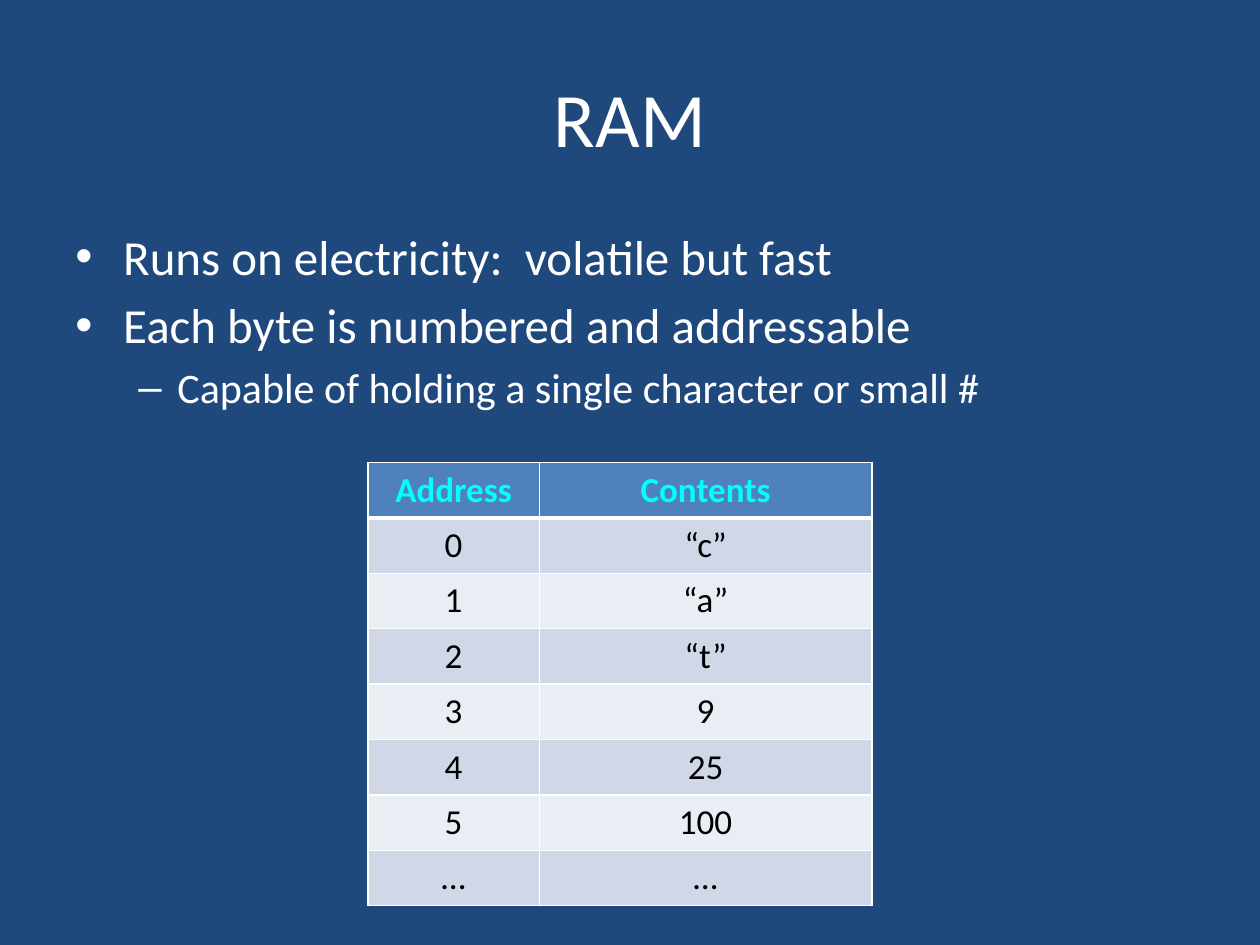
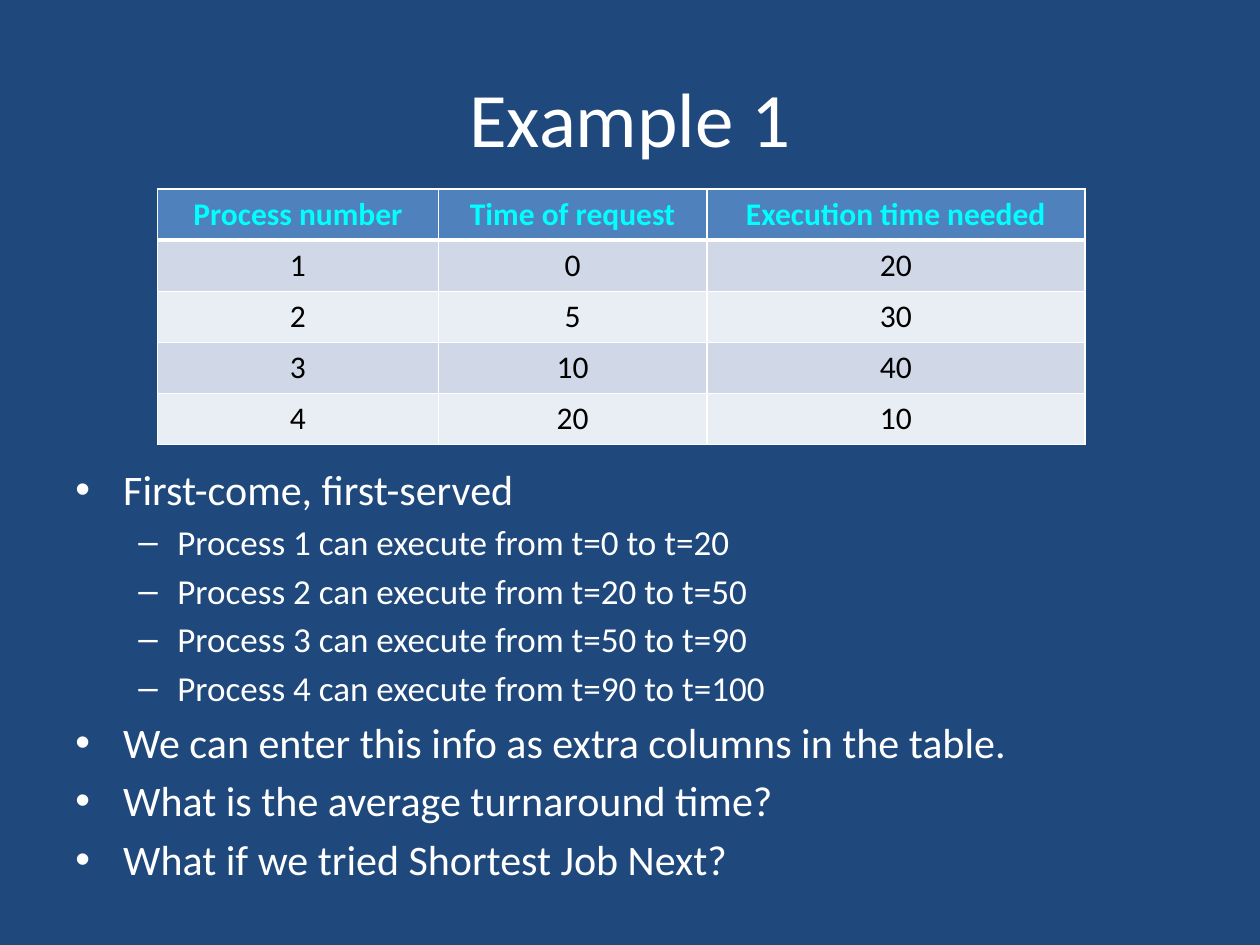
from lxml import etree
from pptx import Presentation
from pptx.dml.color import RGBColor
from pptx.enum import text
from pptx.oxml import ns
from pptx.util import Inches, Pt

NAVY = RGBColor(0x1F, 0x49, 0x7D)
WHITE = RGBColor(0xFF, 0xFF, 0xFF)
CYAN = RGBColor(0x00, 0xFF, 0xFF)
BLACK = RGBColor(0x00, 0x00, 0x00)
HEADER_BLUE = RGBColor(0x4F, 0x81, 0xBD)
BANDS = RGBColor(0xD0, 0xD8, 0xE8), RGBColor(0xE9, 0xED, 0xF4)
FONT = "Calibri"
TITLE_BOX = (0.5, 0.3, 9, 1.25)
BULLETS = (("•", 0.38, 0.38), ("–", 0.81, 0.31))

RAM_POINTS = [
    (0, "Runs on electricity:  volatile but fast"),
    (0, "Each byte is numbered and addressable"),
    (1, "Capable of holding a single character or small #"),
]
RAM_ROWS = [
    ("Address", "Contents"),
    ("0", "“c”"),
    ("1", "“a”"),
    ("2", "“t”"),
    ("3", "9"),
    ("4", "25"),
    ("5", "100"),
    ("…", "…"),
]
SCHEDULE_POINTS = [
    (0, "First-come, first-served"),
    (1, "Process 1 can execute from t=0 to t=20"),
    (1, "Process 2 can execute from t=20 to t=50"),
    (1, "Process 3 can execute from t=50 to t=90"),
    (1, "Process 4 can execute from t=90 to t=100"),
    (0, "We can enter this info as extra columns in the table."),
    (0, "What is the average turnaround time?"),
    (0, "What if we tried Shortest Job Next?"),
]
SCHEDULE_ROWS = [
    ("Process number", "Time of request", "Execution time needed"),
    ("1", "0", "20"),
    ("2", "5", "30"),
    ("3", "10", "40"),
    ("4", "20", "10"),
]


def format_runs(paragraph, size, color, bold=False):
    """Apply the shared font to every run of a paragraph."""
    for run in paragraph.runs:
        run.font.name = FONT
        run.font.size = Pt(size)
        run.font.bold = bold
        run.font.color.rgb = color


def add_text_frame(slide, box):
    """Add a wrapping text box and return its text frame."""
    frame = slide.shapes.add_textbox(*map(Inches, box)).text_frame
    frame.word_wrap = True
    return frame


def add_title(slide, title):
    """Add the centred slide title."""
    frame = add_text_frame(slide, TITLE_BOX)
    frame.vertical_anchor = text.MSO_ANCHOR.MIDDLE
    frame.text = title
    paragraph = frame.paragraphs[0]
    paragraph.alignment = text.PP_ALIGN.CENTER
    format_runs(paragraph, 44, WHITE)


def add_bullets(slide, box, points, sizes):
    """Add a two-level bullet list with one font size per level."""
    frame = add_text_frame(slide, box)
    frame.text = "\n".join(words for level, words in points)
    for paragraph, (level, words) in zip(frame.paragraphs, points):
        mark, margin, hanging = BULLETS[level]
        paragraph.level = level
        paragraph.space_before = Pt(0.19 * sizes[level])
        format_runs(paragraph, sizes[level], WHITE)
        properties = paragraph._p.get_or_add_pPr()
        properties.set("marL", str(Inches(margin)))
        properties.set("indent", str(-Inches(hanging)))
        etree.SubElement(properties, ns.qn("a:buFont"), typeface="Arial")
        etree.SubElement(properties, ns.qn("a:buChar"), char=mark)


def set_borders(cell, top, bottom):
    """Draw white cell borders, with the given top and bottom widths."""
    properties = cell._tc.get_or_add_tcPr()
    widths = {"a:lnL": 1, "a:lnR": 1, "a:lnT": top, "a:lnB": bottom}
    for position, (tag, width) in enumerate(widths.items()):
        line = etree.Element(ns.qn(tag), w=str(Pt(width)))
        fill = etree.SubElement(line, ns.qn("a:solidFill"))
        etree.SubElement(fill, ns.qn("a:srgbClr"), val=str(WHITE))
        properties.insert(position, line)


def add_banded_table(slide, left, top, height, column_widths, rows, size):
    """Add a centred table with a blue header and alternating bands."""
    box = (left, top, sum(column_widths), height)
    table = slide.shapes.add_table(
        len(rows), len(column_widths), *map(Inches, box)).table
    for column, width in zip(table.columns, column_widths):
        column.width = Inches(width)
    for row_index, values in enumerate(rows):
        header = row_index == 0
        for column_index, value in enumerate(values):
            cell = table.cell(row_index, column_index)
            cell.text = value
            cell.fill.solid()
            cell.fill.fore_color.rgb = (
                HEADER_BLUE if header else BANDS[(row_index - 1) % 2])
            set_borders(cell, 3 if row_index == 1 else 1, 3 if header else 1)
            paragraph = cell.text_frame.paragraphs[0]
            paragraph.alignment = text.PP_ALIGN.CENTER
            format_runs(paragraph, size, CYAN if header else BLACK, header)


def add_slide(presentation, title):
    """Add a navy slide with its title."""
    slide = presentation.slides.add_slide(presentation.slide_layouts[6])
    slide.background.fill.solid()
    slide.background.fill.fore_color.rgb = NAVY
    add_title(slide, title)
    return slide


def add_ram_slide(presentation):
    """Show how memory bytes are addressed."""
    slide = add_slide(presentation, "RAM")
    add_bullets(slide, (0.5, 1.75, 9, 1.8), RAM_POINTS, (28, 24))
    add_banded_table(slide, 2.92, 3.67, 3.52, (1.36, 2.64), RAM_ROWS, 20)


def add_schedule_slide(presentation):
    """Show process requests and their first-come schedule."""
    slide = add_slide(presentation, "Example 1")
    add_bullets(slide, (0.5, 3.63, 9, 3.7), SCHEDULE_POINTS, (24, 20))
    add_banded_table(
        slide, 1.25, 1.5, 2.03, (2.23, 2.13, 3), SCHEDULE_ROWS, 18)


def main():
    """Build and save the presentation."""
    presentation = Presentation()
    presentation.slide_width = Inches(10)
    presentation.slide_height = Inches(7.5)
    add_ram_slide(presentation)
    add_schedule_slide(presentation)
    presentation.save("out.pptx")


if __name__ == "__main__":
    main()
